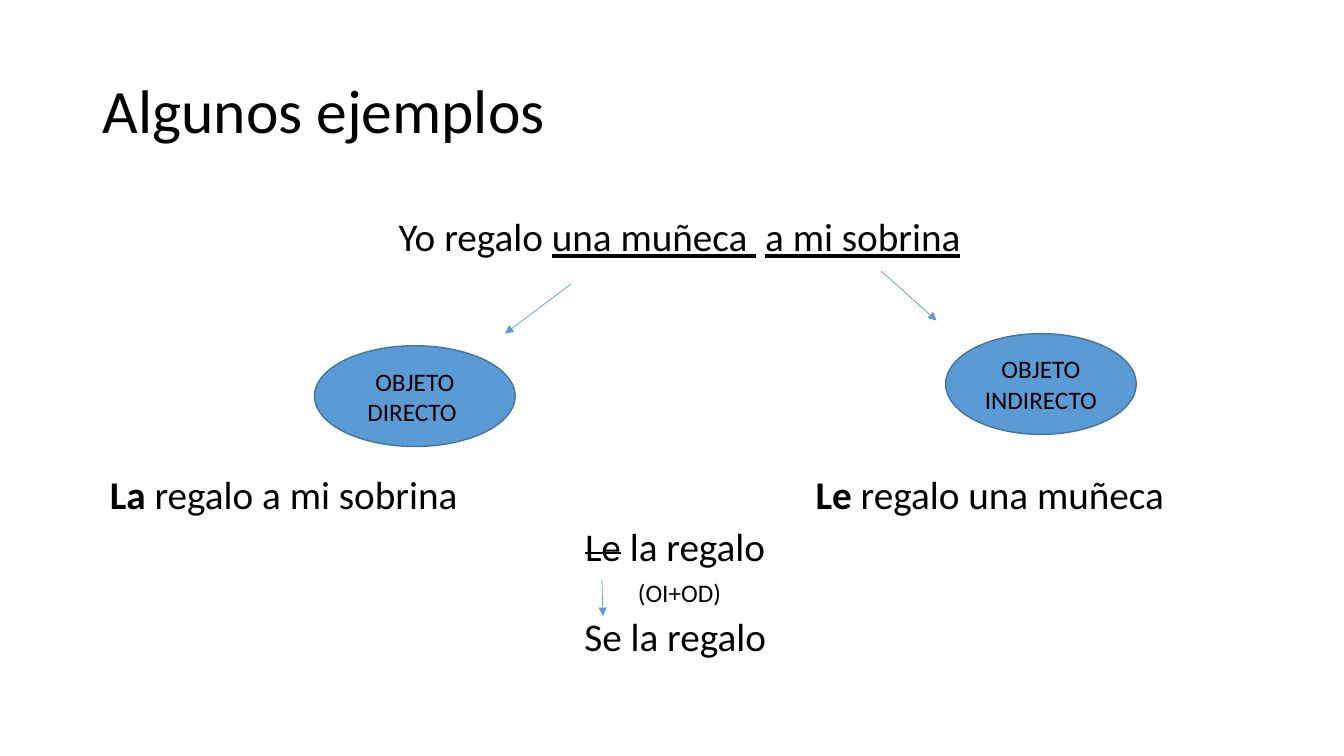
from lxml.etree import SubElement
from pptx import Presentation
from pptx.dml.color import RGBColor
from pptx.enum.shapes import MSO_CONNECTOR as Connector, MSO_SHAPE as Shape
from pptx.enum.text import MSO_ANCHOR as Anchor, PP_ALIGN as Align
from pptx.oxml.ns import qn
from pptx.util import Inches, Pt

BLACK = RGBColor(0x00, 0x00, 0x00)
BLUE = RGBColor(0x5B, 0x9B, 0xD5)
DARK_BLUE = RGBColor(0x43, 0x73, 0x9E)
FONT = "Calibri"
WIDTH, HEIGHT = Inches(13.33), Inches(7.5)
BODY_LEFT, BODY_WIDTH = 7.43, 86.25


def share(*percents):
    return [round((HEIGHT if index % 2 else WIDTH) * percent / 100)
            for index, percent in enumerate(percents)]


def write(para, parts, size, align=Align.CENTER, spacing=1.0, before=0):
    para.alignment = align
    para.line_spacing = spacing
    para.space_before = Pt(before)
    para.font.name = FONT
    para.font.size = Pt(size)
    para.font.color.rgb = BLACK
    for text, style in parts:
        span = para.add_run()
        span.text = text
        if style == "bold":
            span.font.bold = True
        elif style == "underline":
            span.font.underline = True
        elif style == "strike":
            span._r.get_or_add_rPr().set("strike", "sngStrike")


def add_tab(para, position):
    stops = SubElement(para._p.get_or_add_pPr(), qn("a:tabLst"))
    SubElement(stops, qn("a:tab"), pos=str(position), algn="l")


def add_text_box(page, place, anchor=Anchor.TOP):
    box = page.shapes.add_textbox(*share(*place))
    box.text_frame.word_wrap = True
    box.text_frame.vertical_anchor = anchor
    return box.text_frame


def add_oval(page, place, label):
    oval = page.shapes.add_shape(Shape.OVAL, *share(*place))
    oval.shadow.inherit = False
    oval.fill.solid()
    oval.fill.fore_color.rgb = BLUE
    oval.line.color.rgb = DARK_BLUE
    oval.line.width = Pt(1)
    oval.text_frame.word_wrap = True
    oval.text_frame.vertical_anchor = Anchor.MIDDLE
    write(oval.text_frame.paragraphs[0], [(label, None)], 18)


def add_arrow(page, ends):
    arrow = page.shapes.add_connector(Connector.STRAIGHT, *share(*ends))
    arrow.line.color.rgb = BLUE
    arrow.line.width = Pt(0.5)
    SubElement(arrow.line._get_or_add_ln(), qn("a:tailEnd"), type="triangle")
    SubElement(arrow._element.spPr, qn("a:effectLst"))


def add_sentences(page):
    opening = add_text_box(page, (BODY_LEFT, 28.67, BODY_WIDTH, 8))
    write(opening.paragraphs[0],
          [("Yo regalo ", None), ("una muñeca ", "underline"),
           (" ", None), ("a mi sobrina", "underline")], 28, spacing=0.8)

    answers = add_text_box(page, (BODY_LEFT, 62.8, BODY_WIDTH, 28))
    pair = answers.paragraphs[0]
    add_tab(pair, Inches(7))
    write(pair, [("La", "bold"), (" regalo a mi sobrina\t", None),
                 ("Le", "bold"), (" regalo una muñeca", None)],
          28, Align.LEFT, 0.8)
    for parts, size in (
        ([("Le", "strike"), (" la regalo ", None)], 28),
        ([("(OI+OD)", None)], 18),
        ([("Se la regalo ", None)], 28),
    ):
        write(answers.add_paragraph(), parts, size, spacing=0.8, before=10)


def main():
    deck = Presentation()
    deck.slide_width, deck.slide_height = WIDTH, HEIGHT
    page = deck.slides.add_slide(deck.slide_layouts[6])

    title = add_text_box(page, (6.9, 5.33, BODY_WIDTH, 19.33), Anchor.MIDDLE)
    write(title.paragraphs[0], [("Algunos ejemplos", None)], 44, Align.LEFT, 0.9)
    add_sentences(page)
    add_oval(page, (23.4, 45.73, 14.93, 13.33), "OBJETO DIRECTO ")
    add_oval(page, (70.36, 44.13, 14.18, 13.33), "OBJETO INDIRECTO")
    for ends in (
        (42.46, 37.6, 37.58, 44.13),
        (65.57, 35.87, 69.69, 42.4),
        (44.79, 76.67, 44.86, 81.47),
    ):
        add_arrow(page, ends)
    deck.save("out.pptx")


if __name__ == "__main__":
    main()
